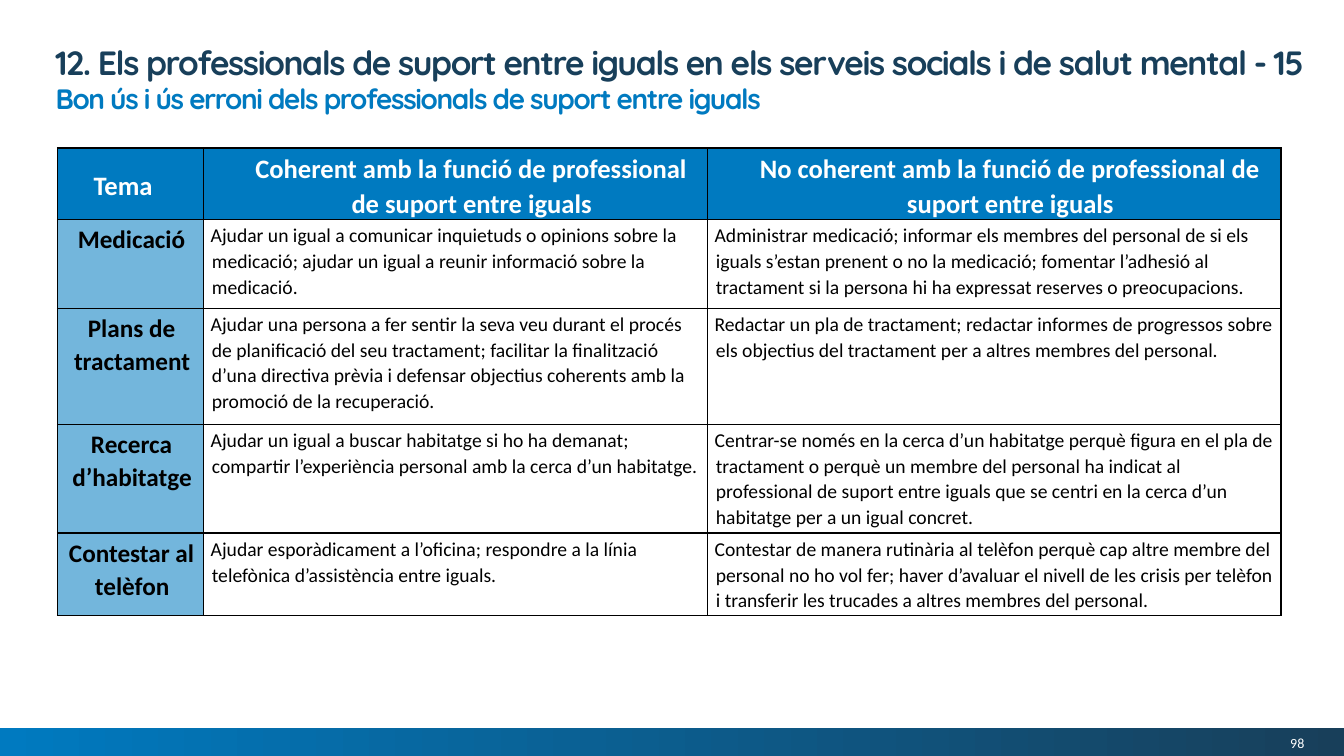
from lxml import etree
from pptx import Presentation
from pptx.dml.color import RGBColor
from pptx.enum import shapes, text
from pptx.oxml.ns import qn
from pptx.util import Cm, Pt

TITLE = "12. Els professionals de suport entre iguals en els serveis socials i de salut mental - 15"
SUBTITLE = "Bon ús i ús erroni dels professionals de suport entre iguals"
PAGE_NUMBER = "98"
HEADER = (
    "Tema",
    "Coherent amb la funció de professional de suport entre iguals",
    "No coherent amb la funció de professional de suport entre iguals",
)
TOPICS = [
    ("Medicació",
     "Ajudar un igual a comunicar inquietuds o opinions sobre la medicació; ajudar un igual "
     "a reunir informació sobre la medicació.",
     "Administrar medicació; informar els membres del personal de si els iguals s’estan prenent "
     "o no la medicació; fomentar l’adhesió al tractament si la persona hi ha expressat reserves "
     "o preocupacions."),
    ("Plans de tractament",
     "Ajudar una persona a fer sentir la seva veu durant el procés de planificació del seu "
     "tractament; facilitar la finalització d’una directiva prèvia i defensar objectius coherents "
     "amb la promoció de la recuperació.",
     "Redactar un pla de tractament; redactar informes de progressos sobre els objectius del "
     "tractament per a altres membres del personal."),
    ("Recerca d’habitatge",
     "Ajudar un igual a buscar habitatge si ho ha demanat; compartir l’experiència personal amb "
     "la cerca d’un habitatge.",
     "Centrar-se només en la cerca d’un habitatge perquè figura en el pla de tractament o perquè "
     "un membre del personal ha indicat al professional de suport entre iguals que se centri en "
     "la cerca d’un habitatge per a un igual concret."),
    ("Contestar al telèfon",
     "Ajudar esporàdicament a l’oficina; respondre a la línia telefònica d’assistència entre iguals.",
     "Contestar de manera rutinària al telèfon perquè cap altre membre del personal no ho vol fer; "
     "haver d’avaluar el nivell de les crisis per telèfon i transferir les trucades a altres "
     "membres del personal."),
]
COLUMN_WIDTHS = (3.68, 12.7, 14.45)
ROW_HEIGHTS = (1.73, 2.24, 2.92, 2.74, 2.08)

BLUE = RGBColor(0x00, 0x7A, 0xC0)
NAVY = RGBColor(0x18, 0x3F, 0x5A)
PALE_BLUE = RGBColor(0x73, 0xB6, 0xDC)
BLACK = RGBColor(0, 0, 0)
WHITE = RGBColor(0xFF, 0xFF, 0xFF)

LEFT, CENTER, RIGHT = text.PP_ALIGN.LEFT, text.PP_ALIGN.CENTER, text.PP_ALIGN.RIGHT
TOP, MIDDLE, BOTTOM = (text.MSO_ANCHOR.TOP, text.MSO_ANCHOR.MIDDLE,
                       text.MSO_ANCHOR.BOTTOM)

HEADER_FONT = dict(name="Calibri", size=Pt(19), bold=True)
TOPIC_FONT = dict(name="Calibri", size=Pt(18), bold=True)
BODY_FONT = dict(name="Calibri", size=Pt(14), bold=False)


def apply(target, values):
    for name, value in values.items():
        setattr(target, name, value)


def place(shape, left, top, width, height):
    apply(shape, dict(left=Cm(left), top=Cm(top), width=Cm(width), height=Cm(height)))


def write(frame, words, font, color, align=LEFT, spacing=None):
    """Fill the first paragraph with one formatted run and return both."""
    para = frame.paragraphs[0]
    apply(para, dict(alignment=align, line_spacing=spacing, space_before=Pt(0)))
    span = para.add_run()
    span.text = words
    apply(span.font, font)
    span.font.color.rgb = color
    return para, span


def indent(para, left, first):
    props = para._p.get_or_add_pPr()
    props.set("marL", str(Cm(left)))
    props.set("indent", str(Cm(first)))
    return props


def add_heading(box, words, size, color, anchor, inset):
    frame = box.text_frame
    apply(frame, dict(word_wrap=True, auto_size=text.MSO_AUTO_SIZE.NONE,
                      vertical_anchor=anchor, **inset))
    para, span = write(frame, words, dict(name="Quicksand", size=Pt(size), bold=True),
                       color, spacing=Pt(33))
    span.font._element.set("spc", "-100")
    etree.SubElement(indent(para, 0, 0), qn("a:buNone"))


def add_borders(cell):
    props = cell._tc.get_or_add_tcPr()
    for place_in_order, side in enumerate(("lnL", "lnR", "lnT", "lnB")):
        line = etree.Element(qn("a:" + side), w=str(Pt(1)))
        fill = etree.SubElement(line, qn("a:solidFill"))
        etree.SubElement(fill, qn("a:srgbClr"), val=str(BLACK))
        props.insert(place_in_order, line)


def fill_cell(cell, words, row, column):
    apply(cell, dict(margin_left=Cm(0.18), margin_top=Cm(0.08),
                     margin_right=Cm(0.13), margin_bottom=0))
    is_header, is_topic = row == 0, column == 0
    cell.vertical_anchor = MIDDLE if is_header else TOP
    if is_header or is_topic:
        cell.fill.solid()
        cell.fill.fore_color.rgb = BLUE if is_header else PALE_BLUE
    else:
        cell.fill.background()
    font = HEADER_FONT if is_header else TOPIC_FONT if is_topic else BODY_FONT
    align = CENTER if is_header != is_topic else LEFT
    para, _ = write(cell.text_frame, words, font, WHITE if is_header else BLACK, align, 1.07)
    indent(para, 0.76 if is_header else 0.03, -0.03)
    add_borders(cell)


def main():
    deck = Presentation()
    deck.slide_width, deck.slide_height = Cm(33.87), Cm(19.05)
    page = deck.slides.add_slide(deck.slide_layouts[1])

    title, subtitle = page.placeholders
    no_inset = dict(margin_left=0, margin_top=0, margin_right=0, margin_bottom=0)
    place(title, 1.14, 0.79, 32.08, 1.07)
    add_heading(title, TITLE, 24, NAVY, TOP, {})
    place(subtitle, 1.4, 1.9, 31.04, 1)
    add_heading(subtitle, SUBTITLE, 20, BLUE, BOTTOM, no_inset)

    footer = page.shapes.add_shape(shapes.MSO_SHAPE.RECTANGLE,
                                   0, Cm(18.34), deck.slide_width, Cm(0.71))
    footer.shadow.inherit = False
    footer.line.fill.background()
    footer.fill.gradient()
    footer.fill.gradient_angle = 0
    for stop, position, color in zip(footer.fill.gradient_stops, (0, 1), (BLUE, NAVY)):
        stop.position = position
        stop.color.rgb = color

    number = page.shapes.add_textbox(Cm(28.3), Cm(18.42), Cm(4.57), Cm(0.61))
    apply(number.text_frame, dict(word_wrap=True, vertical_anchor=MIDDLE, **no_inset))
    write(number.text_frame, PAGE_NUMBER, dict(name="Calibri", size=Pt(10)), WHITE, RIGHT)

    rows = [HEADER, *TOPICS]
    table = page.shapes.add_table(len(rows), len(HEADER), Cm(1.45), Cm(3.73),
                                  Cm(sum(COLUMN_WIDTHS)), Cm(sum(ROW_HEIGHTS))).table
    apply(table, dict(first_row=False, horz_banding=False))
    for column, width in zip(table.columns, COLUMN_WIDTHS):
        column.width = Cm(width)
    for row, height in zip(table.rows, ROW_HEIGHTS):
        row.height = Cm(height)
    for r, row in enumerate(rows):
        for c, words in enumerate(row):
            fill_cell(table.cell(r, c), words, r, c)

    deck.save("out.pptx")


if __name__ == "__main__":
    main()
